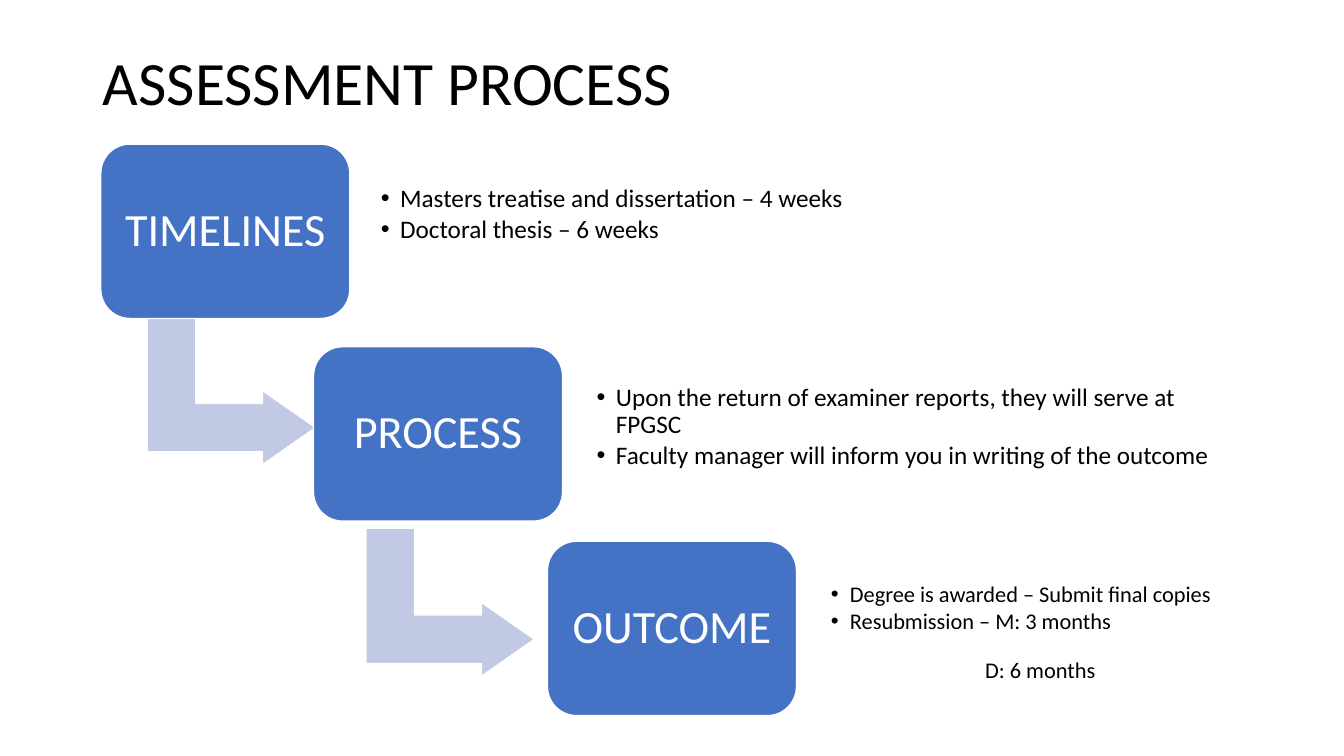
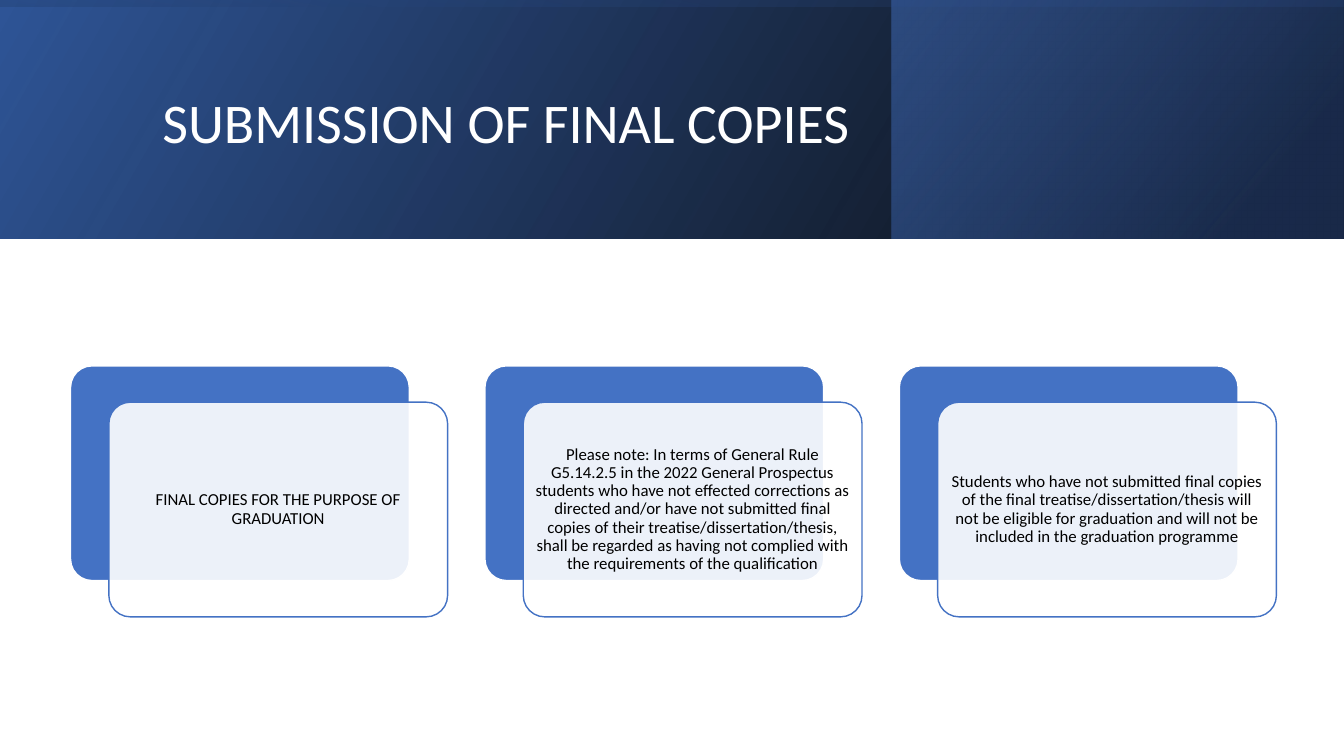
from dataclasses import dataclass

from lxml.etree import SubElement
from pptx import Presentation
from pptx.dml.color import RGBColor
from pptx.enum.shapes import MSO_SHAPE
from pptx.enum.text import MSO_ANCHOR, MSO_AUTO_SIZE, PP_ALIGN
from pptx.oxml.ns import qn
from pptx.presentation import Presentation as Deck
from pptx.shapes.autoshape import Shape
from pptx.slide import Slide
from pptx.text.text import TextFrame
from pptx.util import Inches, Pt

COLORS = {
    "text": "000000",
    "white": "FFFFFF",
    "blue": "4472C4",
    "pale": "C1C9E4",
    "deep": "2F5597",
    "navy": "203864",
}
FONT = "Calibri"
FRAME_FORMAT = {
    "word_wrap": True,
    "auto_size": MSO_AUTO_SIZE.NONE,
    "vertical_anchor": MSO_ANCHOR.MIDDLE,
}
MARGINS = ("margin_left", "margin_top", "margin_right", "margin_bottom")
BULLET_INDENT = 0.19


@dataclass(frozen=True)
class Box:
    left: float
    top: float
    width: float
    height: float

    def lengths(self) -> tuple:
        return tuple(Inches(v) for v in (self.left, self.top, self.width, self.height))


@dataclass(frozen=True)
class Stop:
    position: float
    color: str
    opacity: int = 100


@dataclass(frozen=True)
class Band:
    box: Box
    stops: tuple[Stop, Stop]
    angle: float
    rotation: float = 0


@dataclass(frozen=True)
class Step:
    label: str
    left: float
    top: float
    details_box: Box
    details: tuple[str, ...]
    size: int = 18
    inset: float = 0.1
    continuation: str = ""


STEPS = (
    Step("TIMELINES", 1, 1.43, Box(3.68, 1.43, 5.75, 1.4),
         ("Masters treatise and dissertation – 4 weeks", "Doctoral thesis – 6 weeks")),
    Step("PROCESS", 3.11, 3.44, Box(5.82, 3.54, 6.55, 1.4),
         ("Upon the return of examiner reports, they will serve at FPGSC",
          "Faculty manager will inform you in writing of the outcome")),
    Step("OUTCOME", 5.43, 5.37, Box(8.17, 5.58, 4.45, 1.4),
         ("Degree is awarded – Submit final copies", "Resubmission – M: 3 months"),
         16, 0.07, "D: 6 months"),
)
ARROWS = (Box(1.56, 3.04, 1.47, 1.67), Box(3.73, 5.14, 1.47, 1.67))

BANDS = (
    Band(Box(0, 0, 13.33, 2.37), (Stop(0, "text", 96), Stop(1, "deep")), 330),
    Band(Box(8.84, 0, 4.48, 2.37), (Stop(0.19, "navy", 68), Stop(1, "blue", 48)), 320),
    Band(Box(5.48, -5.48, 2.37, 13.33), (Stop(0.23, "deep", 16), Stop(0.99, "text", 45)), 350, 270),
)
NOTICES = (
    "FINAL COPIES FOR THE PURPOSE OF GRADUATION",
    "Please note: In terms of General Rule G5.14.2.5 in the 2022 General Prospectus "
    "students who have not effected corrections as directed and/or have not submitted "
    "final copies of their treatise/dissertation/thesis, shall be regarded as having "
    "not complied with the requirements of the qualification",
    "Students who have not submitted final copies of the final "
    "treatise/dissertation/thesis will not be eligible for graduation and will not be "
    "included in the graduation programme",
)


def rgb(name: str) -> RGBColor:
    return RGBColor.from_string(COLORS[name])


def set_opacity(shape: Shape, *percents: int) -> None:
    for color, percent in zip(shape._element.spPr.iter(qn("a:srgbClr")), percents):
        SubElement(color, qn("a:alpha"), val=str(percent * 1000))


def write(frame: TextFrame, lines: tuple[str, ...], size: int, color: str = "text",
          align: PP_ALIGN = PP_ALIGN.LEFT, inset: float = 0.1, after: float = 0) -> None:
    margins = dict.fromkeys(MARGINS, Inches(inset))
    for name, value in {**FRAME_FORMAT, **margins}.items():
        setattr(frame, name, value)
    paragraph_format = {"alignment": align, "line_spacing": 0.9,
                        "space_before": Pt(0), "space_after": Pt(after)}
    font_format = {"name": FONT, "size": Pt(size), "bold": False}
    frame.text = "\n".join(lines)
    for paragraph in frame.paragraphs:
        for name, value in paragraph_format.items():
            setattr(paragraph, name, value)
        for run in paragraph.runs:
            for name, value in font_format.items():
                setattr(run.font, name, value)
            run.font.color.rgb = rgb(color)


def add_titled_slide(deck: Deck, title: str, box: Box, size: int, color: str) -> Slide:
    slide = deck.slides.add_slide(deck.slide_layouts[5])
    heading = slide.shapes.title
    heading.left, heading.top, heading.width, heading.height = box.lengths()
    write(heading.text_frame, (title,), size, color)
    return slide


def add_panel(slide: Slide, kind: MSO_SHAPE, box: Box, fill: str, line: str,
              adjustments: tuple[float, ...]) -> Shape:
    panel = slide.shapes.add_shape(kind, *box.lengths())
    panel.shadow.inherit = False
    panel.fill.solid()
    panel.fill.fore_color.rgb = rgb(fill)
    panel.line.color.rgb = rgb(line)
    panel.line.width = Pt(1)
    for index, value in enumerate(adjustments):
        panel.adjustments[index] = value
    return panel


def add_arrow(slide: Slide, box: Box) -> None:
    arrow = add_panel(slide, MSO_SHAPE.BENT_UP_ARROW, box, "pale", "white", (0.328, 0.25, 0.358))
    arrow.rotation = 90


def add_step(slide: Slide, step: Step) -> None:
    tile = add_panel(slide, MSO_SHAPE.ROUNDED_RECTANGLE, Box(step.left, step.top, 2.47, 1.73),
                     "blue", "white", (0.167,))
    write(tile.text_frame, (step.label,), 33, "white", PP_ALIGN.CENTER, 0.14)

    frame = slide.shapes.add_textbox(*step.details_box.lengths()).text_frame
    lines = step.details + ((step.continuation,) if step.continuation else ())
    write(frame, lines, step.size, inset=step.inset, after=2.4)
    for paragraph in frame.paragraphs[:len(step.details)]:
        properties = paragraph._p.get_or_add_pPr()
        properties.set("marL", str(Inches(BULLET_INDENT)))
        properties.set("indent", str(-Inches(BULLET_INDENT)))
        SubElement(properties, qn("a:buFont"), typeface="Arial")
        SubElement(properties, qn("a:buChar"), char="•")
    if step.continuation:
        continuation = frame.paragraphs[-1]
        continuation.space_before = Pt(15)
        continuation._p.get_or_add_pPr().set("marL", str(Inches(1.53)))


def add_band(slide: Slide, band: Band) -> None:
    strip = slide.shapes.add_shape(MSO_SHAPE.RECTANGLE, *band.box.lengths())
    strip.shadow.inherit = False
    strip.rotation = band.rotation
    strip._element.spPr.xfrm.set("flipH", "1")
    strip.fill.gradient()
    strip.fill.gradient_angle = 360 - band.angle
    for target, stop in zip(strip.fill.gradient_stops, band.stops):
        target.position = stop.position
        target.color.rgb = rgb(stop.color)
    set_opacity(strip, *(stop.opacity for stop in band.stops))
    strip.line.fill.background()


def add_notice(slide: Slide, left: float, notice: str) -> None:
    add_panel(slide, MSO_SHAPE.ROUNDED_RECTANGLE, Box(left, 3.63, 3.36, 2.13),
              "blue", "white", (0.1,))
    card = add_panel(slide, MSO_SHAPE.ROUNDED_RECTANGLE, Box(left + 0.38, 3.99, 3.36, 2.13),
                     "white", "blue", (0.1,))
    set_opacity(card, 90)
    write(card.text_frame, (notice,), 12, align=PP_ALIGN.CENTER, inset=0.05)


def build_assessment(deck: Deck) -> None:
    slide = add_titled_slide(deck, "ASSESSMENT PROCESS", Box(0.92, 0.4, 11.5, 0.9), 44, "text")
    for arrow in ARROWS:
        add_arrow(slide, arrow)
    for step in STEPS:
        add_step(slide, step)


def build_submission(deck: Deck) -> None:
    slide = add_titled_slide(deck, "SUBMISSION OF FINAL COPIES",
                             Box(1.51, 0.38, 10.63, 1.72), 40, "white")
    for band in BANDS:
        add_band(slide, band)
    slide.shapes._spTree.append(slide.shapes.title._element)
    for column, notice in enumerate(NOTICES):
        add_notice(slide, 0.7 + column * 4.11, notice)


def main() -> None:
    deck = Presentation()
    deck.slide_width, deck.slide_height = Inches(13.33), Inches(7.5)
    build_assessment(deck)
    build_submission(deck)
    deck.save("out.pptx")


if __name__ == "__main__":
    main()
